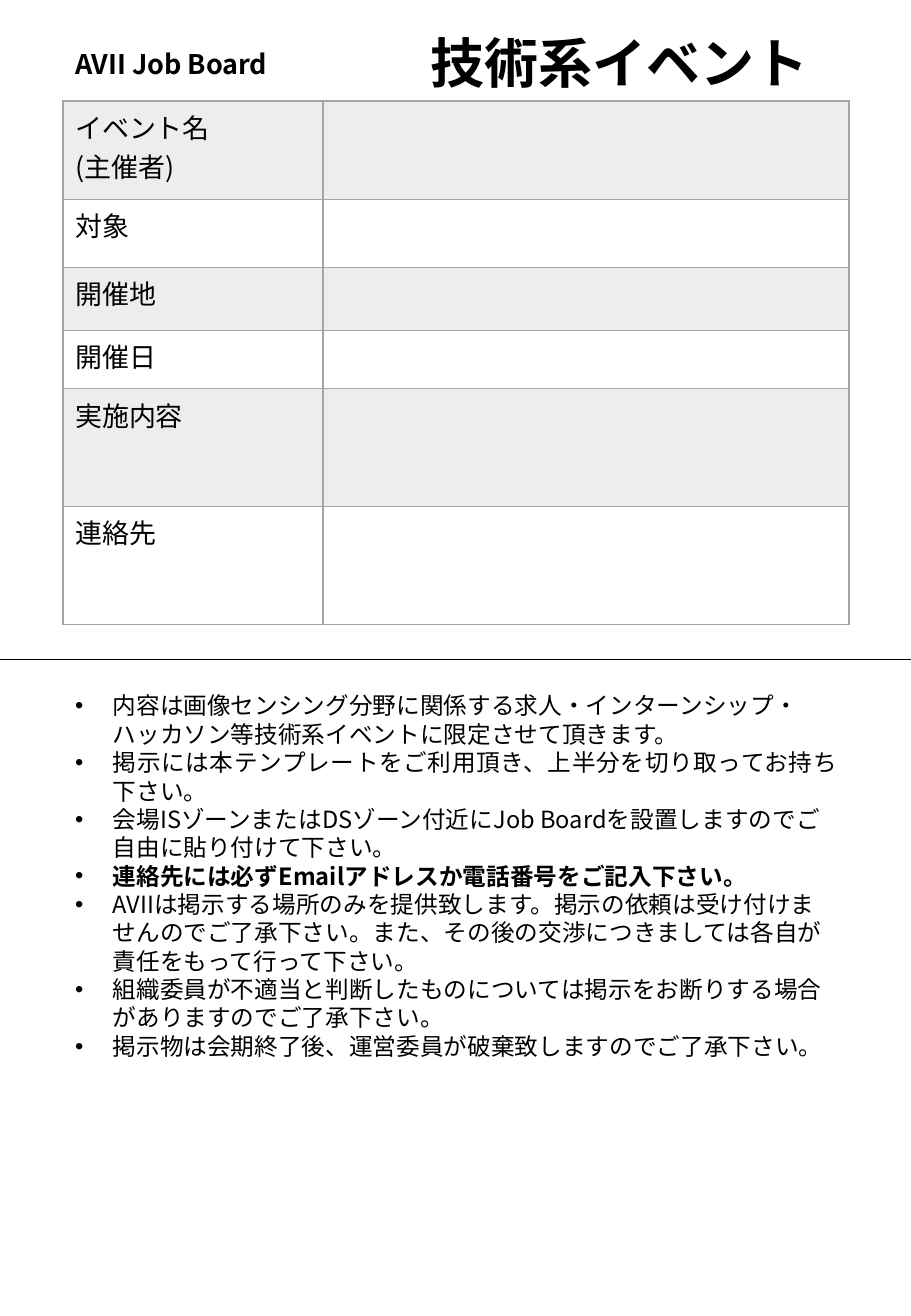
"""Job board poster form for technical events, with posting rules below the cut line."""
from lxml import etree
from pptx import Presentation
from pptx.dml.color import RGBColor
from pptx.enum.lang import MSO_LANGUAGE_ID
from pptx.enum.shapes import MSO_CONNECTOR
from pptx.enum.text import MSO_ANCHOR, MSO_AUTO_SIZE, PP_ALIGN
from pptx.oxml.ns import qn
from pptx.util import Inches, Pt

JAPANESE = MSO_LANGUAGE_ID.JAPANESE
STRAIGHT = MSO_CONNECTOR.STRAIGHT
MIDDLE = MSO_ANCHOR.MIDDLE
GROW = MSO_AUTO_SIZE.SHAPE_TO_FIT_TEXT
LEFT, JUSTIFY = PP_ALIGN.LEFT, PP_ALIGN.JUSTIFY
FONT = "Noto Sans CJK JP"
COLORS = {"text": "000000", "border": "A5A5A5", "band": "EDEDED"}


def write(p, text, size=16, bold=False, align=LEFT, spacing=None, bullet=False):
    p.alignment = align
    p.line_spacing = spacing
    if bullet:
        pPr = p._p.get_or_add_pPr()
        pPr.set("marL", str(Inches(0.31)))
        pPr.set("indent", str(Inches(-0.31)))
        etree.SubElement(pPr, qn("a:buFont")).set("typeface", "Arial")
        etree.SubElement(pPr, qn("a:buChar")).set("char", "•")
    r = p.add_run()
    r.text = text
    r.font.size = Pt(size)
    r.font.bold = bold
    r.font.color.rgb = RGBColor.from_string(COLORS["text"])
    r.font.name = FONT
    r.font.language_id = JAPANESE
    etree.SubElement(r._r.get_or_add_rPr(), qn("a:ea")).set("typeface", FONT)


def set_borders(cell):
    tcPr = cell._tc.get_or_add_tcPr()
    for i, side in enumerate(("a:lnL", "a:lnR", "a:lnT", "a:lnB")):
        ln = etree.Element(qn(side), w=str(Pt(1)))
        fill = etree.SubElement(ln, qn("a:solidFill"))
        etree.SubElement(fill, qn("a:srgbClr")).set("val", COLORS["border"])
        tcPr.insert(i, ln)


prs = Presentation()
prs.slide_width, prs.slide_height = Inches(7.5), Inches(10.83)
s = prs.slides.add_slide(prs.slide_layouts[6])

for left, width, text, size in [(0.52, 2.94, "AVII Job Board", 16),
                                (3.45, 3.53, "技術系イベント", 32)]:
    tf = s.shapes.add_textbox(Inches(left), Inches(0.24), Inches(width), Inches(0.6)).text_frame
    tf.word_wrap = True
    tf.vertical_anchor = MIDDLE
    write(tf.paragraphs[0], text, size=size, bold=True, align=JUSTIFY, spacing=0.9)

fields = [(0.81, ["イベント名", "(主催者)"], JUSTIFY), (0.56, ["対象"], LEFT),
          (0.52, ["開催地"], LEFT), (0.48, ["開催日"], LEFT),
          (0.97, ["実施内容"], LEFT), (0.97, ["連絡先"], JUSTIFY)]
table = s.shapes.add_table(len(fields), 2, Inches(0.52), Inches(0.83),
                           Inches(6.47), Inches(4.31)).table
for column, width in zip(table.columns, (2.14, 4.33)):
    column.width = Inches(width)
for i, (height, lines, align) in enumerate(fields):
    row = table.rows[i]
    row.height = Inches(height)
    for cell in row.cells:
        if i % 2 == 0:
            cell.fill.solid()
            cell.fill.fore_color.rgb = RGBColor.from_string(COLORS["band"])
        else:
            cell.fill.background()
        set_borders(cell)
    tf = row.cells[0].text_frame
    for j, text in enumerate(lines):
        write(tf.add_paragraph() if j else tf.paragraphs[0], text, align=align)

cut = s.shapes.add_connector(STRAIGHT, Inches(0), Inches(5.43), Inches(7.5), Inches(5.43))
cut.line.color.rgb = RGBColor.from_string(COLORS["text"])
cut.line.width = Pt(0.5)
etree.SubElement(cut._element.spPr, qn("a:effectLst"))

rules = [
    ("内容は画像センシング分野に関係する求人・インターンシップ・ハッカソン等技術系イベントに限定させて頂きます。", LEFT, False),
    ("掲示には本テンプレートをご利用頂き、上半分を切り取ってお持ち下さい。", JUSTIFY, False),
    ("会場ISゾーンまたはDSゾーン付近にJob Boardを設置しますのでご自由に貼り付けて下さい。", LEFT, False),
    ("連絡先には必ずEmailアドレスか電話番号をご記入下さい。", JUSTIFY, True),
    ("AVIIは掲示する場所のみを提供致します。掲示の依頼は受け付けませんのでご了承下さい。"
     "また、その後の交渉につきましては各自が責任をもって行って下さい。", LEFT, False),
    ("組織委員が不適当と判断したものについては掲示をお断りする場合がありますのでご了承下さい。", LEFT, False),
    ("掲示物は会期終了後、運営委員が破棄致しますのでご了承下さい。", LEFT, False),
]
tf = s.shapes.add_textbox(Inches(0.52), Inches(5.64), Inches(6.47), Inches(3.4)).text_frame
tf.word_wrap = True
tf.auto_size = GROW
for i, (text, align, bold) in enumerate(rules):
    write(tf.add_paragraph() if i else tf.paragraphs[0], text, size=14, bold=bold,
          align=align, spacing=Pt(16.8), bullet=True)

prs.save("out.pptx")
